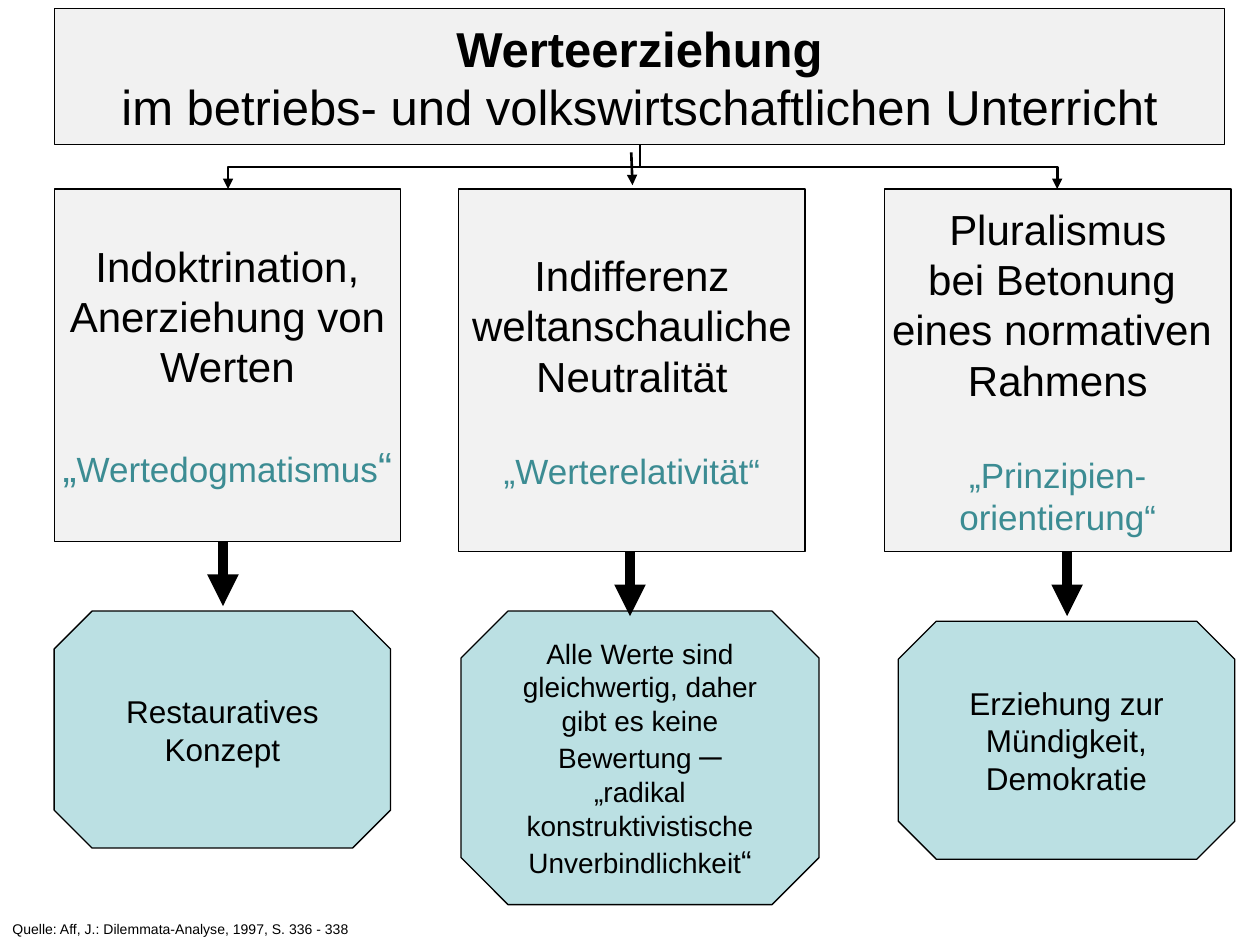
from lxml.etree import SubElement
from pptx import Presentation
from pptx.dml.color import RGBColor
from pptx.enum.shapes import MSO_CONNECTOR as Link, MSO_SHAPE as Shape
from pptx.enum.text import MSO_ANCHOR as Anchor, PP_ALIGN as Align
from pptx.oxml.ns import qn
from pptx.util import Inches, Pt

BLACK = RGBColor(0x00, 0x00, 0x00)
WHITE = RGBColor(0xFF, 0xFF, 0xFF)
SILVER = RGBColor(0xDD, 0xDD, 0xDD)
LIGHT = RGBColor(0xF2, 0xF2, 0xF2)
AQUA = RGBColor(0xBB, 0xE0, 0xE3)
TEAL = RGBColor(0x3C, 0x8C, 0x93)

COLUMNS, ROWS = 100, 75
FONT = "Arial"


class ValuesSlide:
    def __init__(self, deck):
        self.slide = deck.slides.add_slide(deck.slide_layouts[6])
        self.column = deck.slide_width / COLUMNS
        self.row = deck.slide_height / ROWS

    def x(self, columns):
        return round(columns * self.column)

    def y(self, rows):
        return round(rows * self.row)

    def area(self, left, top, width, height):
        return self.x(left), self.y(top), self.x(width), self.y(height)

    def fill_text(self, frame, lines, wrap=True, align=Align.CENTER):
        frame.word_wrap = wrap
        for index, (parts, size, style) in enumerate(lines):
            paragraph = frame.paragraphs[0] if index == 0 else frame.add_paragraph()
            paragraph.alignment = align
            paragraph.space_before = Pt(style.get("gap", 0))
            paragraph.font.name = FONT
            paragraph.font.size = Pt(size)
            paragraph.font.bold = style.get("bold", False)
            paragraph.font.color.rgb = style.get("color", BLACK)
            for part in [parts] if isinstance(parts, str) else parts:
                text, own_size = (part, None) if isinstance(part, str) else part
                run = paragraph.add_run()
                run.text = text
                if own_size:
                    run.font.size = Pt(own_size)

    def box(self, area, lines, fill, kind=Shape.RECTANGLE, corner=None, wrap=True, opacity=None):
        shape = self.slide.shapes.add_shape(kind, *self.area(*area))
        shape.shadow.inherit = False
        shape.fill.solid()
        shape.fill.fore_color.rgb = fill
        if opacity:
            color = shape._element.spPr.find(qn("a:solidFill"))[0]
            SubElement(color, qn("a:alpha"), val=str(opacity * 1000))
        shape.line.color.rgb = BLACK
        shape.line.width = Pt(0.75)
        if corner:
            shape.adjustments[0] = corner
        shape.text_frame.vertical_anchor = Anchor.MIDDLE
        self.fill_text(shape.text_frame, lines, wrap)

    def octagon(self, area, lines):
        self.box(area, lines, AQUA, Shape.OCTAGON, corner=0.16)

    def note(self, area, lines):
        label = self.slide.shapes.add_textbox(*self.area(*area))
        label.fill.solid()
        label.fill.fore_color.rgb = WHITE
        self.fill_text(label.text_frame, lines, align=Align.LEFT)

    def arrow(self, start, end, width, kind=Link.STRAIGHT):
        connector = self.slide.shapes.add_connector(
            kind, self.x(start[0]), self.y(start[1]), self.x(end[0]), self.y(end[1]))
        connector.line.color.rgb = BLACK
        connector.line.width = Pt(width)
        properties = connector._element.spPr
        SubElement(properties.find(qn("a:ln")), qn("a:tailEnd"), type="triangle")
        SubElement(properties, qn("a:effectLst"))
        return connector

    def branch(self, start, end, width):
        middle_x, middle_y = (start[0] + end[0]) / 2, (start[1] + end[1]) / 2
        half_drop, half_span = (end[1] - start[1]) / 2, abs(end[0] - start[0]) / 2
        connector = self.arrow(
            (middle_x - half_drop, middle_y - half_span),
            (middle_x + half_drop, middle_y + half_span), width, Link.ELBOW)
        frame = connector._element.spPr.find(qn("a:xfrm"))
        to_right = end[0] > start[0]
        frame.set("rot", str((270 if to_right else 90) * 60000))
        if to_right:
            frame.set("flipH", "1")


def main():
    deck = Presentation()
    deck.slide_width, deck.slide_height = Inches(10), Inches(7.5)
    page = ValuesSlide(deck)

    page.box((4.3, 0.7, 92.9, 10.8), [
        ("Werteerziehung", 28, {"bold": True}),
        ("im betriebs- und volkswirtschaftlichen Unterricht", 28, {}),
    ], SILVER, opacity=41)

    page.arrow((50.1, 12.1), (50.2, 14.7), 1.5)
    for target in (83.9, 18.1):
        page.branch((50.8, 11.5), (target, 15), 1.5)

    approaches = [
        (4.3, 28, ["Indoktrination,", "Anerziehung von", "Werten"],
         [[("„", 24), "Wertedogmatismus", ("“", 24)]]),
        (36.4, 28.8, ["Indifferenz", "weltanschauliche", "Neutralität"],
         ["„Werterelativität“"]),
        (70.2, 28.8, ["Pluralismus", "bei Betonung ", "eines normativen ", "Rahmens"],
         ["„Prinzipien-", "orientierung“"]),
    ]
    for left, height, heading, position in approaches:
        lines = [(text, 24, {}) for text in heading]
        lines += [(text, 20, {"color": TEAL, "gap": 0 if index else 28})
                  for index, text in enumerate(position)]
        page.box((left, 15, 27.5, height), lines, LIGHT, wrap=False)

    page.octagon((36.6, 48.5, 28.4, 23.3), [
        (["Alle Werte sind gleichwertig, daher gibt es keine Bewertung ", ("─", 18)], 16, {}),
        (["„radikal konstruktivistische Unverbindlichkeit", ("“", 18)], 16, {}),
    ])
    page.octagon((4.3, 48.5, 26.7, 18.8), [("Restauratives Konzept", 18, {})])
    page.octagon((71.3, 49.3, 26.7, 18.9), [("Erziehung zur Mündigkeit, Demokratie", 18, {})])

    for column, top in ((17.7, 43), (50, 43.8), (84.7, 43.8)):
        page.arrow((column, top), (column, top + 5.1), 6)

    page.note((0, 72.6, 33.8, 2.4), [
        ("Quelle: Aff, J.: Dilemmata-Analyse, 1997, S. 336 - 338", 8, {"gap": 4}),
    ])
    deck.save("out.pptx")


if __name__ == "__main__":
    main()
